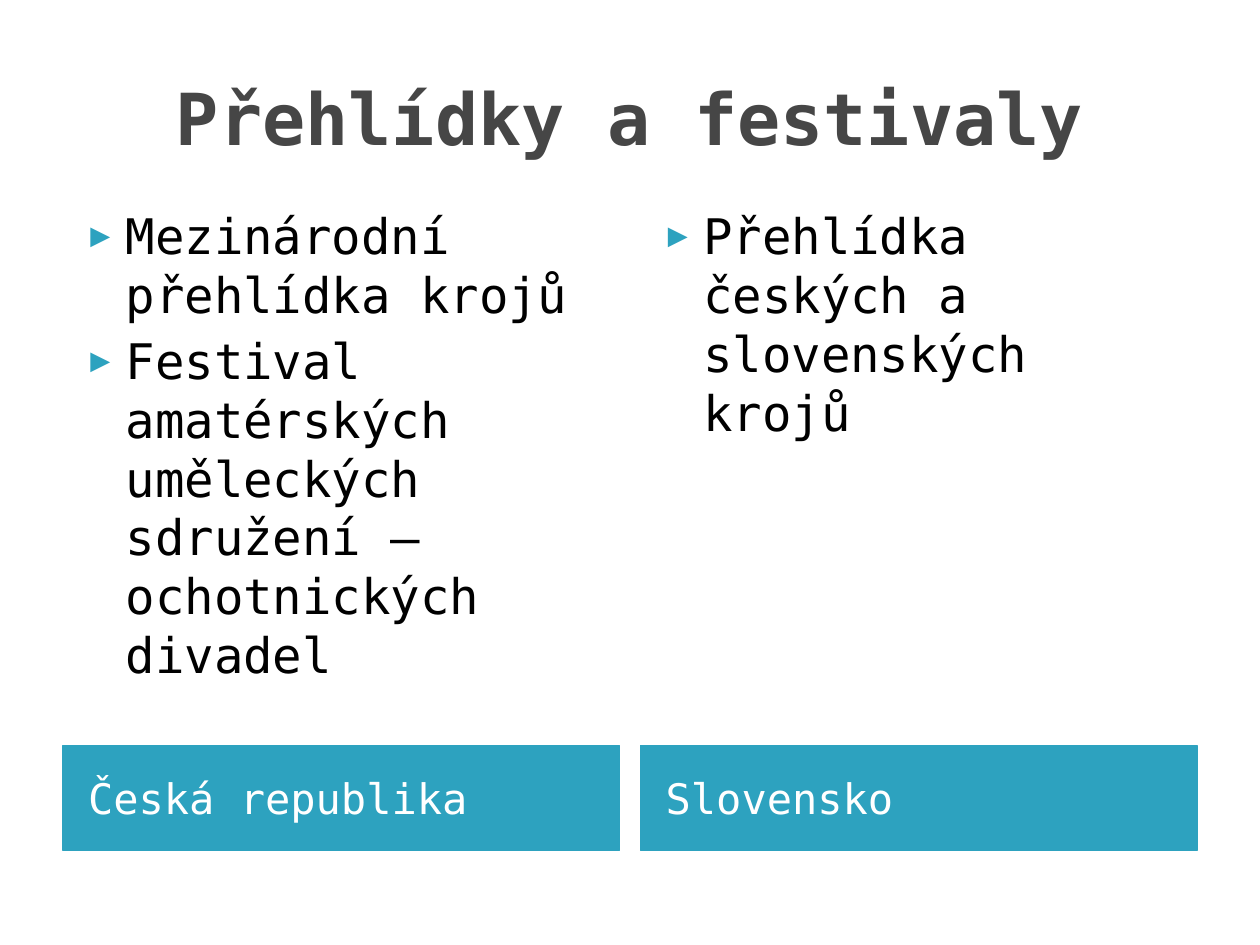
from lxml.etree import SubElement
from pptx import Presentation
from pptx.dml.color import RGBColor
from pptx.enum.shapes import MSO_SHAPE as Shape
from pptx.enum.text import MSO_ANCHOR as Anchor, PP_ALIGN as Align
from pptx.oxml.ns import qn
from pptx.util import Pt

FONT = "DejaVu Sans Mono"
TEAL, GRAY, BLACK, WHITE = "2DA2BF", "464646", "000000", "FFFFFF"
MARGIN, COLUMN_WIDTH, COLUMN_GAP = 36, 318, 12
COLUMN_TOP, LIST_HEIGHT, LABEL_OFFSET, LABEL_HEIGHT = 114, 310, 312, 60

COLUMNS = [
    ("Česká republika", [
        "Mezinárodní přehlídka krojů",
        "Festival amatérských uměleckých sdružení – ochotnických divadel",
    ]),
    ("Slovensko", ["Přehlídka českých a slovenských krojů"]),
]


def color(hex_string):
    return RGBColor.from_string(hex_string)


def add_run(paragraph, text, size, hex_string, bold=False):
    run = paragraph.add_run()
    run.text = text
    font = run.font
    font.name, font.size, font.bold = FONT, Pt(size), bold
    font.color.rgb = color(hex_string)


def add_text_box(slide, left, top, width, height):
    text_frame = slide.shapes.add_textbox(Pt(left), Pt(top), Pt(width), Pt(height)).text_frame
    text_frame.word_wrap = True
    return text_frame


def add_bullet(paragraph):
    properties = paragraph._p.get_or_add_pPr()
    properties.set("marL", str(Pt(28.8)))
    properties.set("indent", str(Pt(-20.16)))
    bullet_color = SubElement(properties, qn("a:buClr"))
    SubElement(bullet_color, qn("a:srgbClr"), val=TEAL)
    SubElement(properties, qn("a:buSzPct"), val="68000")
    SubElement(properties, qn("a:buFont"), typeface=FONT)
    SubElement(properties, qn("a:buChar"), char="▶")


def add_title(slide, left, top, width, height):
    text_frame = add_text_box(slide, left, top, width, height)
    text_frame.vertical_anchor = Anchor.MIDDLE
    paragraph = text_frame.paragraphs[0]
    paragraph.alignment = Align.CENTER
    add_run(paragraph, "Přehlídky a festivaly", 41, GRAY, bold=True)


def add_list(slide, items, left, top, width, height):
    text_frame = add_text_box(slide, left, top, width, height)
    for index, item in enumerate(items):
        paragraph = text_frame.add_paragraph() if index else text_frame.paragraphs[0]
        add_bullet(paragraph)
        if index:
            paragraph.space_before = Pt(4)
        add_run(paragraph, item, 28, BLACK)


def add_label(slide, text, left, top, width, height):
    shape = slide.shapes.add_shape(Shape.RECTANGLE, Pt(left), Pt(top), Pt(width), Pt(height))
    shape.shadow.inherit = False
    shape.fill.solid()
    shape.fill.fore_color.rgb = color(TEAL)
    shape.line.color.rgb = color(TEAL)
    shape.line.width = Pt(0.75)
    text_frame = shape.text_frame
    text_frame.word_wrap = True
    text_frame.vertical_anchor = Anchor.MIDDLE
    text_frame.margin_left = Pt(14.4)
    paragraph = text_frame.paragraphs[0]
    paragraph.alignment = Align.LEFT
    add_run(paragraph, text, 24, WHITE)


def add_column(slide, label, items, left, top, width):
    """Place a bulleted list with its country label below."""
    add_list(slide, items, left, top, width, LIST_HEIGHT)
    add_label(slide, label, left, top + LABEL_OFFSET, width, LABEL_HEIGHT)


def main():
    presentation = Presentation()
    presentation.slide_width, presentation.slide_height = Pt(720), Pt(540)
    slide = presentation.slides.add_slide(presentation.slide_layouts[6])
    add_title(slide, MARGIN, 21.6, 648, 90)
    for index, (label, items) in enumerate(COLUMNS):
        left = MARGIN + index * (COLUMN_WIDTH + COLUMN_GAP)
        add_column(slide, label, items, left, COLUMN_TOP, COLUMN_WIDTH)
    presentation.save("out.pptx")


if __name__ == "__main__":
    main()
